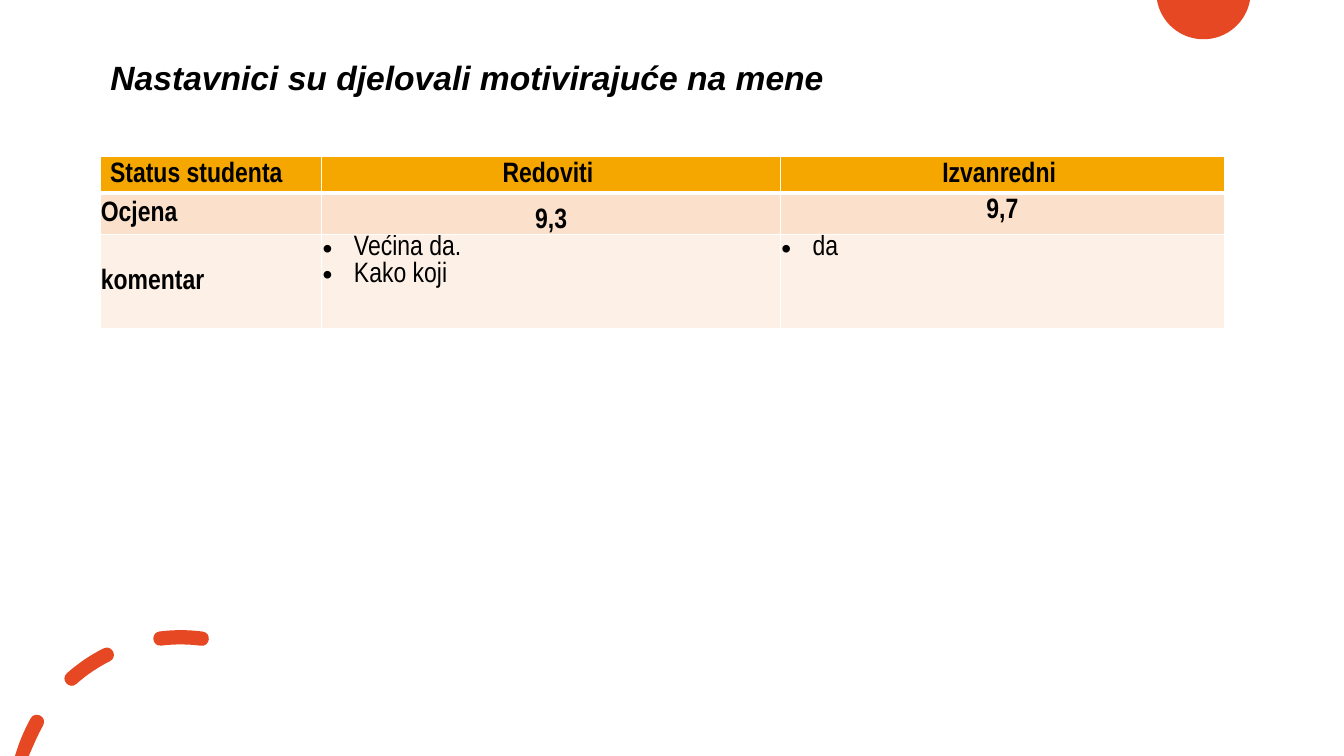
"""Build the slide with student ratings of how motivating the teachers were."""
import math

from pptx import Presentation
from pptx.dml.color import RGBColor
from pptx.enum import text
from pptx.oxml import parse_xml
from pptx.oxml.ns import nsdecls, qn
from pptx.util import Cm, Pt

TITLE = "Nastavnici su djelovali motivirajuće na mene"
ROWS = [
    [["Status studenta"], ["Redoviti "], ["Izvanredni "]],
    [["Ocjena"], ["9,3"], ["9,7"]],
    [["komentar"], ["Većina da.", "Kako koji"], ["da"]],
]
ROW_FILLS = ["F5A700", "FBE1CC", "FDF1E7"]
ROW_HEIGHTS = [0.66, 1.04, 2.36]
COLUMN_WIDTHS = [5.59, 11.56, 11.18]
TOP, MIDDLE, BOTTOM = text.MSO_ANCHOR.TOP, text.MSO_ANCHOR.MIDDLE, text.MSO_ANCHOR.BOTTOM
ANCHORS = [[MIDDLE, MIDDLE, MIDDLE], [MIDDLE, BOTTOM, TOP], [MIDDLE, TOP, TOP]]
WIDE_MARGIN_CELLS = [(0, 0), (0, 1), (0, 2), (1, 2)]
NARROW_MARGINS = {"margin_left": Cm(0.02), "margin_right": Cm(0.02),
                  "margin_top": Cm(0.02), "margin_bottom": Cm(0)}
TITLE_FONT = {"name": "Arial", "size": Pt(24), "bold": True, "italic": True}
CELL_FONT = {"name": "Arial Narrow", "size": Pt(20)}
TITLE_BOX = {"left": Cm(2.53), "top": Cm(0.56), "width": Cm(29.21), "height": Cm(2.87)}
ACCENT = "E64823"
SLIDE_WIDTH, SLIDE_HEIGHT = 33.87, 19.05
DISC_CENTER, DISC_RADIUS = (30.33, -0.2), 1.19
RING_CENTER, RING_RADIUS, DASH_RADIUS = (4.55, 20.2), 4.14, 0.18
DASH_ANGLES = [(15, 29), (48.5, 63.3), (83, 97.4)]


def rgb(value):
    return RGBColor.from_string(value)


def apply(target, values):
    for name, value in values.items():
        setattr(target, name, value)


def on_circle(center, radius, angle):
    """Return the point at an angle in degrees, clockwise from the left."""
    turn = math.radians(angle)
    return center[0] - radius * math.cos(turn), center[1] - radius * math.sin(turn)


def arc(center, radius, start, end):
    """Return the two control points and the end point of one curved segment."""
    sweep = math.radians(end - start)
    reach = math.hypot(1, 4 / 3 * math.tan(sweep / 4))
    lean = math.degrees(math.atan(4 / 3 * math.tan(sweep / 4)))
    return [on_circle(center, radius * reach, start + lean),
            on_circle(center, radius * reach, end - lean),
            on_circle(center, radius, end)]


def dash_outline(start, end):
    outer, inner = RING_RADIUS + DASH_RADIUS, RING_RADIUS - DASH_RADIUS
    start_center = on_circle(RING_CENTER, RING_RADIUS, start)
    end_center = on_circle(RING_CENTER, RING_RADIUS, end)
    return ([on_circle(RING_CENTER, outer, start)]
            + arc(RING_CENTER, outer, start, end)
            + arc(end_center, DASH_RADIUS, end, end + 180)
            + arc(RING_CENTER, inner, end, start)
            + arc(start_center, DASH_RADIUS, start + 180, start + 360))


def disc_outline():
    chord = math.degrees(math.asin(DISC_CENTER[1] / DISC_RADIUS))
    return ([on_circle(DISC_CENTER, DISC_RADIUS, chord)]
            + arc(DISC_CENTER, DISC_RADIUS, chord, -90)
            + arc(DISC_CENTER, DISC_RADIUS, -90, -180 - chord))


def bend_segments(shape):
    """Join every three straight segments into one cubic curve."""
    lines = list(shape._element.iter(qn("a:lnTo")))
    for first, second, third in zip(lines[::3], lines[1::3], lines[2::3]):
        curve = parse_xml(f'<a:cubicBezTo {nsdecls("a")}/>')
        first.addprevious(curve)
        for line in (first, second, third):
            curve.append(line[0])
            line.getparent().remove(line)


def add_outlines(slide, outlines):
    builder = None
    for outline in outlines:
        points = [(Cm(x), Cm(min(max(y, 0), SLIDE_HEIGHT))) for x, y in outline]
        if builder is None:
            builder = slide.shapes.build_freeform(*points[0])
        else:
            builder.move_to(*points[0])
        builder.add_line_segments(points[1:], close=False)
    shape = builder.convert_to_shape()
    bend_segments(shape)
    shape.shadow.inherit = False
    shape.fill.solid()
    shape.fill.fore_color.rgb = rgb(ACCENT)
    shape.line.fill.background()


def add_borders(cell, row):
    widths = {"L": 1, "R": 1, "T": 3 if row == 1 else 1, "B": 3 if row == 0 else 1}
    properties = cell._tc.get_or_add_tcPr()
    for index, (side, width) in enumerate(widths.items()):
        properties.insert(index, parse_xml(
            f'<a:ln{side} {nsdecls("a")} w="{Pt(width)}"><a:solidFill>'
            f'<a:srgbClr val="FFFFFF"/></a:solidFill></a:ln{side}>'))


def add_bullet(paragraph):
    properties = paragraph._p.get_or_add_pPr()
    properties.set("marL", str(Cm(0.79)))
    properties.set("indent", str(-Cm(0.79)))
    for tag in ('buFont typeface="Arial"', 'buChar char="•"'):
        properties.append(parse_xml(f'<a:{tag} {nsdecls("a")}/>'))


def fill_cell(cell, row, column):
    cell.fill.solid()
    cell.fill.fore_color.rgb = rgb(ROW_FILLS[row])
    cell.vertical_anchor = ANCHORS[row][column]
    if (row, column) not in WIDE_MARGIN_CELLS:
        apply(cell, NARROW_MARGINS)
    add_borders(cell, row)
    is_comment = row == 2 and column > 0
    cell.text_frame.text = "\n".join(ROWS[row][column])
    for paragraph in cell.text_frame.paragraphs:
        centered = column > 0 and not is_comment
        paragraph.alignment = text.PP_ALIGN.CENTER if centered else text.PP_ALIGN.LEFT
        font = paragraph.runs[0].font
        apply(font, {**CELL_FONT, "bold": not is_comment})
        font.color.rgb = rgb("000000")
        if is_comment:
            add_bullet(paragraph)


def add_ratings_table(slide):
    frame = slide.shapes.add_table(len(ROWS), len(COLUMN_WIDTHS), Cm(2.52), Cm(3.95),
                                   Cm(sum(COLUMN_WIDTHS)), Cm(sum(ROW_HEIGHTS)))
    table = frame.table
    for column, width in zip(table.columns, COLUMN_WIDTHS):
        column.width = Cm(width)
    for row, height in zip(table.rows, ROW_HEIGHTS):
        row.height = Cm(height)
    for row in range(len(ROWS)):
        for column in range(len(COLUMN_WIDTHS)):
            fill_cell(table.cell(row, column), row, column)


def write_title(slide):
    title = slide.shapes.title
    apply(title, TITLE_BOX)
    frame = title.text_frame
    frame.text = TITLE
    apply(frame, {"word_wrap": True, "auto_size": text.MSO_AUTO_SIZE.NONE,
                  "vertical_anchor": MIDDLE})
    paragraph = frame.paragraphs[0]
    apply(paragraph, {"alignment": text.PP_ALIGN.LEFT, "line_spacing": 0.9})
    font = paragraph.runs[0].font
    apply(font, TITLE_FONT)
    font.color.rgb = rgb("000000")


def main():
    presentation = Presentation()
    apply(presentation, {"slide_width": Cm(SLIDE_WIDTH), "slide_height": Cm(SLIDE_HEIGHT)})
    slide = presentation.slides.add_slide(presentation.slide_layouts[5])
    add_outlines(slide, [disc_outline()])
    add_outlines(slide, [dash_outline(*angles) for angles in DASH_ANGLES])
    write_title(slide)
    add_ratings_table(slide)
    presentation.save("out.pptx")


if __name__ == "__main__":
    main()
